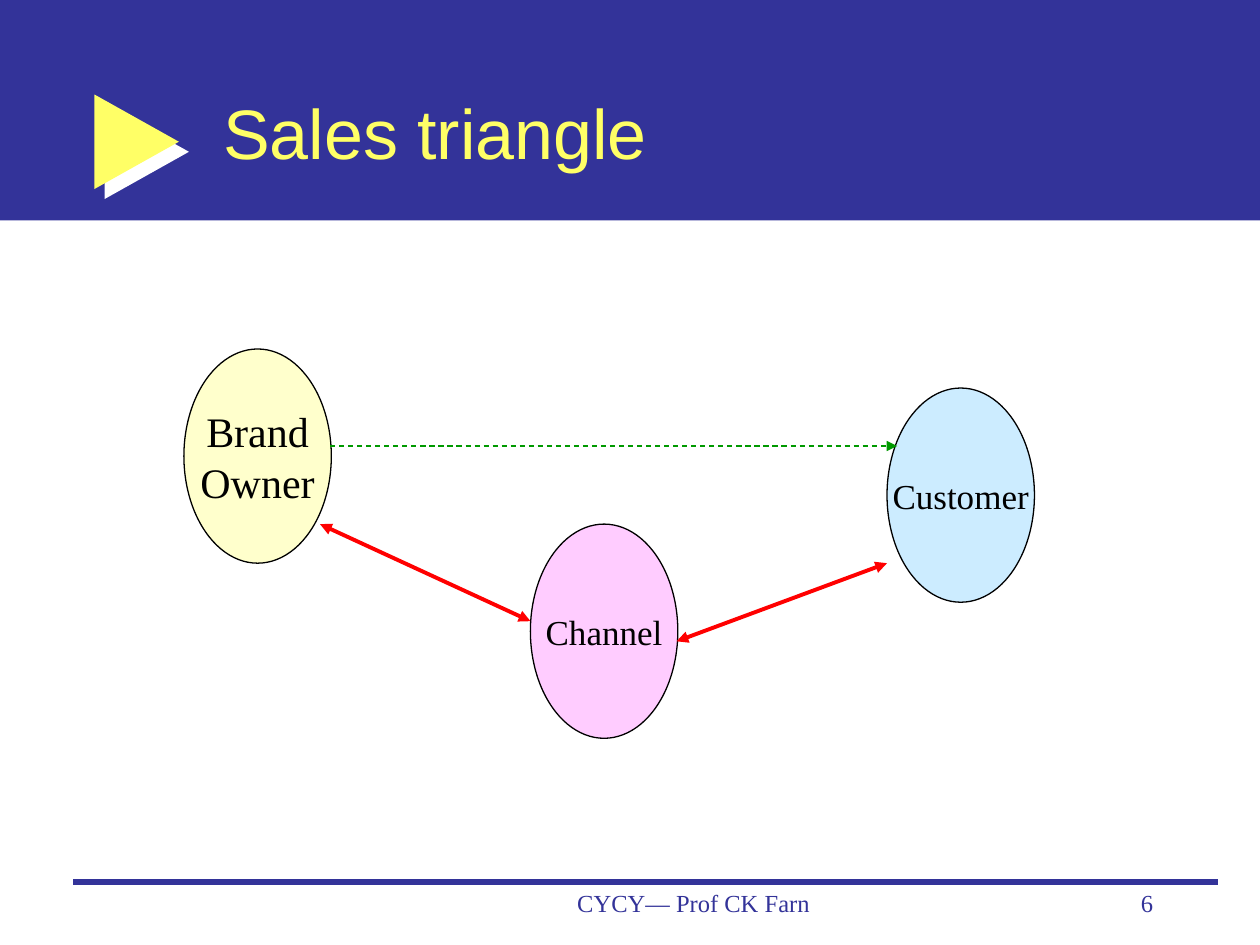
from pptx import Presentation
from pptx.dml.color import RGBColor
from pptx.enum.dml import MSO_LINE
from pptx.enum.shapes import MSO_CONNECTOR, MSO_SHAPE
from pptx.enum.text import MSO_ANCHOR, PP_ALIGN
from pptx.oxml.ns import qn
from pptx.util import Inches, Pt
from lxml.etree import SubElement

NAVY = RGBColor(0x33, 0x33, 0x99)
YELLOW = RGBColor(0xFF, 0xFF, 0x66)
WHITE = RGBColor(0xFF, 0xFF, 0xFF)
BLACK = RGBColor(0x00, 0x00, 0x00)
CREAM = RGBColor(0xFF, 0xFF, 0xCC)
PINK = RGBColor(0xFF, 0xCC, 0xFF)
SKY = RGBColor(0xCC, 0xEC, 0xFF)
RED = RGBColor(0xFF, 0x00, 0x00)
GREEN = RGBColor(0x00, 0x99, 0x00)


def write(sp, text, size=20, font="Times New Roman", color=BLACK,
          align=PP_ALIGN.CENTER, anchor=MSO_ANCHOR.MIDDLE, wrap=True):
    tf = sp.text_frame
    tf.text = text
    tf.word_wrap = wrap
    tf.vertical_anchor = anchor
    for p in tf.paragraphs:
        p.alignment = align
        for r in p.runs:
            r.font.size = Pt(size)
            r.font.name = font
            r.font.color.rgb = color


def add_line(x1, y1, x2, y2, color, width, ends=()):
    c = s.shapes.add_connector(MSO_CONNECTOR.STRAIGHT, Inches(x1), Inches(y1),
                               Inches(x2), Inches(y2))
    c.line.color.rgb = color
    c.line.width = Pt(width)
    ln = c.line._get_or_add_ln()
    for end in ends:
        SubElement(ln, qn("a:" + end), type="triangle")
    SubElement(c.element.spPr, qn("a:effectLst"))
    return c


prs = Presentation()
prs.slide_width, prs.slide_height = Inches(10), Inches(7.5)
s = prs.slides.add_slide(prs.slide_layouts[5])

# Header band
sp = s.shapes.add_shape(MSO_SHAPE.RECTANGLE, 0, 0, prs.slide_width, Inches(1.75))
sp.shadow.inherit = False
sp.fill.solid()
sp.fill.fore_color.rgb = NAVY
sp.line.fill.background()

# Yellow marker over its white drop shape
for offset, color in [(0.08, WHITE), (0, YELLOW)]:
    sp = s.shapes.add_shape(MSO_SHAPE.RIGHT_ARROW, Inches(0.75 + offset),
                            Inches(0.75 + offset), Inches(0.67), Inches(0.75))
    sp.adjustments[0], sp.adjustments[1] = 0.38, 1
    sp.shadow.inherit = False
    sp.fill.solid()
    sp.fill.fore_color.rgb = color
    sp.line.fill.background()

# Title, brought in front of the band
title = s.shapes.title
title.left, title.top = Inches(1.67), Inches(0.42)
title.width, title.height = Inches(7.58), Inches(1.25)
write(title, "Sales triangle", size=40, font="Arial", color=YELLOW,
      align=PP_ALIGN.LEFT)
title.element.getparent().append(title.element)

# Footer
add_line(0.58, 7, 9.67, 7, NAVY, 3)
for x, w, text, align in [(3.92, 3.17, "CYCY— Prof CK Farn", PP_ALIGN.CENTER),
                          (7.17, 2.08, "6", PP_ALIGN.RIGHT)]:
    box = s.shapes.add_textbox(Inches(x), Inches(7), Inches(w), Inches(0.5))
    write(box, text, size=14, color=NAVY, align=align, anchor=MSO_ANCHOR.TOP)

# Parties in the sale
for x, y, text, size, color in [(1.46, 2.77, "Brand\nOwner", 24, CREAM),
                                (4.21, 4.16, "Channel", 20, PINK),
                                (7.04, 3.08, "Customer", 20, SKY)]:
    sp = s.shapes.add_shape(MSO_SHAPE.OVAL, Inches(x), Inches(y),
                            Inches(1.17), Inches(1.7))
    sp.shadow.inherit = False
    sp.fill.solid()
    sp.fill.fore_color.rgb = color
    sp.line.color.rgb = BLACK
    sp.line.width = Pt(0.75)
    write(sp, text, size=size, wrap=False)

# Two-way links through the channel, and the indirect link
for ends in [(2.54, 4.16, 4.21, 4.93), (5.37, 5.09, 7.04, 4.47)]:
    add_line(*ends, RED, 2.25, ends=("headEnd", "tailEnd"))
indirect = add_line(2.62, 3.54, 7.12, 3.54, GREEN, 0.75, ends=("tailEnd",))
indirect.line.dash_style = MSO_LINE.DASH

prs.save("out.pptx")
